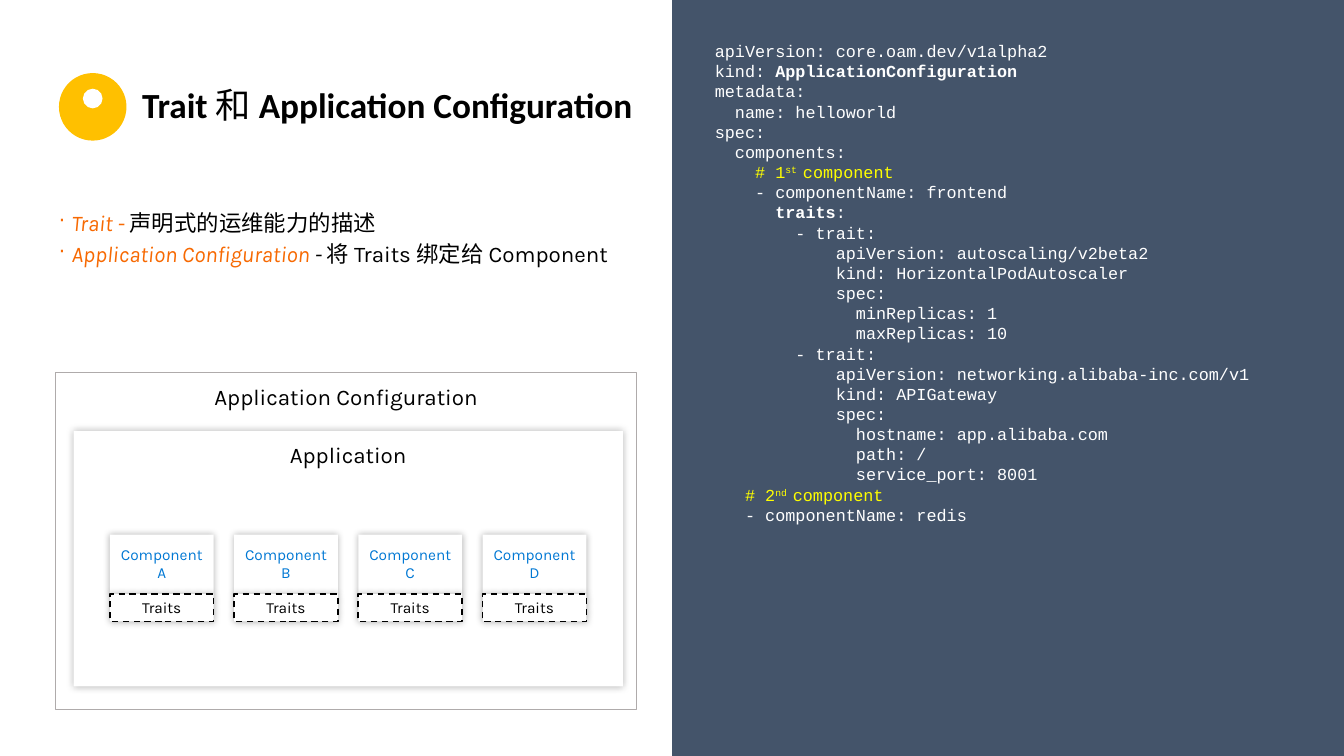
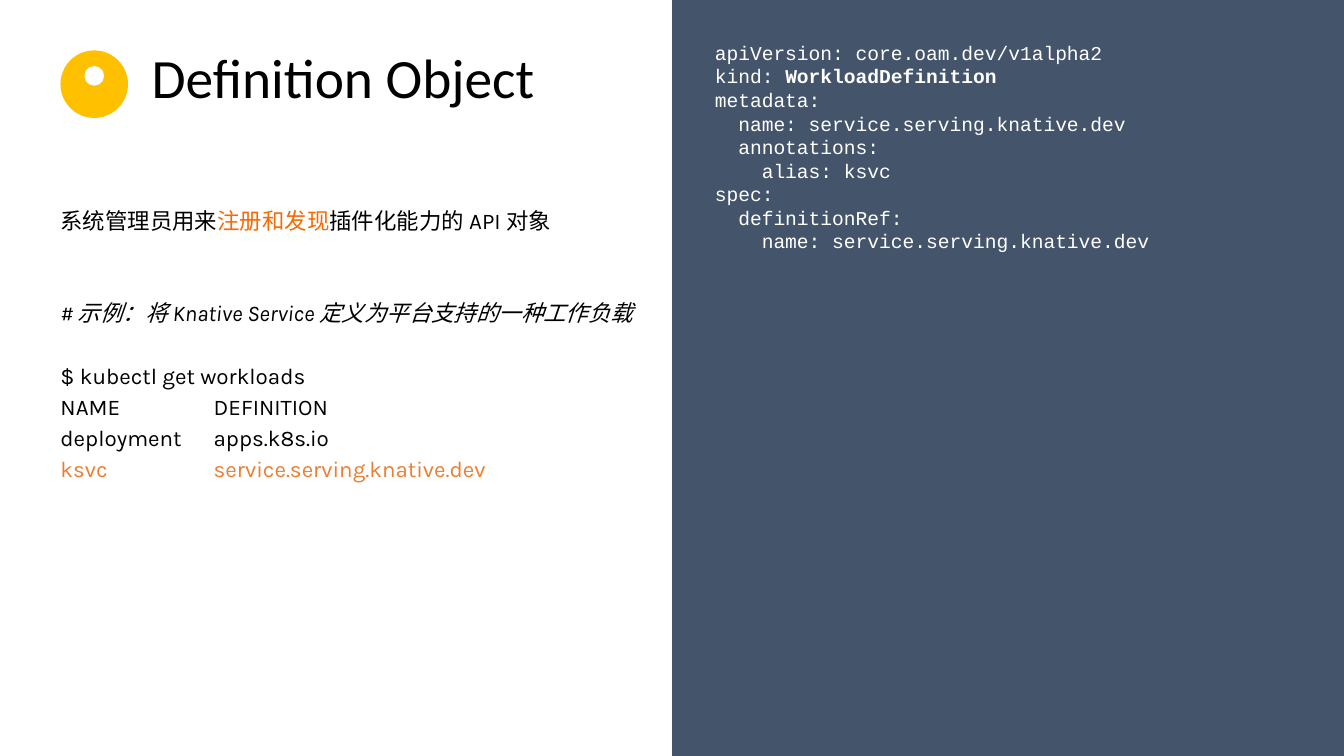
import math

from lxml import etree
from pptx import Presentation, util as u
from pptx.dml.color import RGBColor
from pptx.enum import dml, shapes, text
from pptx.oxml import ns

SLIDE_WIDTH, SLIDE_HEIGHT = 26.67, 15
PANEL_LEFT = SLIDE_WIDTH / 2
WHITE, BLACK, SLATE, GOLD = "FFFFFF", "000000", "44546A", "FFC000"
ORANGE, KSVC_ORANGE, BLUE = "F76902", "ED7D31", "0078D4"
YELLOW, GREY = "FFFF00", "AFABAB"

TITLE_FONT, BODY_FONT, CODE_FONT = "Calibri", "Karla", "Courier New"
BODY = {"name": BODY_FONT, "size": u.Pt(32), "color": BLACK}
SMALL = {**BODY, "size": u.Pt(22)}
BOLD = {"bold": True}
COMMENT = {"color": YELLOW}
SUPERSCRIPT = {**COMMENT, "baseline": 30000}
BODY_GAP = u.Pt(6)
NO_INSET, BOX_INSET, CODE_INSET = (0, 0), (0.2, 0.2), (0.4, 0.32)

TRAIT_CODE = [
    ["apiVersion: core.oam.dev/v1alpha2"],
    ["kind: ", ("ApplicationConfiguration", BOLD)],
    ["metadata:"],
    ["  name: helloworld"],
    ["spec:"],
    ["  components:"],
    [("    # 1", COMMENT), ("st ", SUPERSCRIPT), ("component", COMMENT)],
    ["    - componentName: frontend"],
    ["      ", ("traits", BOLD), ":"],
    ["        - trait:"],
    ["            apiVersion: autoscaling/v2beta2"],
    ["            kind: HorizontalPodAutoscaler"],
    ["            spec:"],
    ["              minReplicas: 1"],
    ["              maxReplicas: 10"],
    ["        - trait:"],
    ["            apiVersion: networking.alibaba-inc.com/v1"],
    ["            kind: APIGateway"],
    ["            spec:"],
    ["              hostname: app.alibaba.com"],
    ["              path: /"],
    ["              service_port: 8001"],
    [("   # 2", COMMENT), ("nd ", SUPERSCRIPT), ("component", COMMENT)],
    ["   - componentName: redis"],
]
WORKLOAD_CODE = [
    ["apiVersion: core.oam.dev/v1alpha2"],
    ["kind: ", ("WorkloadDefinition", BOLD)],
    ["metadata:"],
    ["  name: service.serving.knative.dev"],
    ["  annotations:"],
    ["    alias: ksvc"],
    ["spec:"],
    ["  definitionRef:"],
    ["    name: service.serving.knative.dev"],
]


def rgb(color):
    """Turn a hex string into a colour."""
    return RGBColor.from_string(color)


def inches(*lengths):
    """Turn numbers into lengths."""
    return [u.Inches(length) for length in lengths]


def apply(target, values):
    """Set each attribute of the target from a dict."""
    for name, value in values.items():
        setattr(target, name, value)


def add_run(paragraph, content, style):
    """Add a formatted run to a paragraph."""
    style = dict(style)
    color, baseline = style.pop("color"), style.pop("baseline", None)
    run = paragraph.add_run()
    run.text = content
    apply(run.font, style)
    run.font.color.rgb = rgb(color)
    if baseline:
        run.font._element.set("baseline", str(baseline))


def write(shape, lines, style, inset=(0.1, 0.05), frame=None, **paragraph_values):
    """Write lines of runs into a shape and return its paragraphs."""
    text_frame = shape.text_frame
    margin_x, margin_y = inches(*inset)
    apply(text_frame, {
        "word_wrap": True, "vertical_anchor": text.MSO_ANCHOR.TOP,
        "margin_left": margin_x, "margin_right": margin_x,
        "margin_top": margin_y, "margin_bottom": margin_y, **(frame or {}),
    })
    paragraphs = []
    for runs in lines:
        paragraph = text_frame.add_paragraph() if paragraphs else text_frame.paragraphs[0]
        apply(paragraph, paragraph_values)
        for run in runs:
            content, changes = (run, {}) if isinstance(run, str) else run
            add_run(paragraph, content, {**style, **changes})
        paragraphs.append(paragraph)
    return paragraphs


def add_text(slide, box, lines, style, **options):
    """Add a text box and return its paragraphs."""
    return write(slide.shapes.add_textbox(*inches(*box)), lines, style, **options)


def paint(shape, fill=None, line=None, line_width=1, shadow=False):
    """Give a shape its fill, line and soft shadow."""
    shape.shadow.inherit = False
    if fill:
        shape.fill.solid()
        shape.fill.fore_color.rgb = rgb(fill)
    else:
        shape.fill.background()
    if line:
        shape.line.color.rgb = rgb(line)
        shape.line.width = u.Pt(line_width)
    else:
        shape.line.fill.background()
    if shadow:
        effects = shape._element.spPr.find(ns.qn("a:effectLst"))
        outer = etree.SubElement(effects, ns.qn("a:outerShdw"), blurRad=str(u.Pt(10)), dist="0")
        color = etree.SubElement(outer, ns.qn("a:srgbClr"), val=BLACK)
        etree.SubElement(color, ns.qn("a:alpha"), val="30000")


def add_shape(parent, box, kind=shapes.MSO_SHAPE.RECTANGLE, **look):
    """Add a painted preset shape."""
    shape = parent.shapes.add_shape(kind, *inches(*box))
    paint(shape, **look)
    return shape


def set_bullet(paragraph):
    """Give a paragraph a hanging dot."""
    properties = paragraph._p.get_or_add_pPr()
    indent = u.Inches(0.25)
    properties.set("marL", str(indent))
    properties.set("indent", str(-indent))
    etree.SubElement(properties, ns.qn("a:buSzPct"), val="90000")
    etree.SubElement(properties, ns.qn("a:buChar"), char="·")


def set_tab(paragraph, position):
    """Give a paragraph a left tab stop."""
    tabs = etree.SubElement(paragraph._p.get_or_add_pPr(), ns.qn("a:tabLst"))
    etree.SubElement(tabs, ns.qn("a:tab"), pos=str(u.Inches(position)), algn="l")


def space_out(paragraphs):
    """Put the body gap before every paragraph but the first."""
    for paragraph in paragraphs[1:]:
        paragraph.space_before = BODY_GAP


def add_person_icon(slide, left, top):
    """Draw a person on a gold disc."""
    group = slide.shapes.add_group_shape()
    disc, head, radius = 1.34, 0.39, 0.3
    center = left + disc / 2
    oval = shapes.MSO_SHAPE.OVAL
    add_shape(group, (left, top, disc, disc), oval, fill=GOLD)
    add_shape(group, (center - head / 2, top + 0.31, head, head), oval, fill=WHITE)
    base = top + 1.04
    points = [
        (center - radius * math.cos(math.pi * step / 24),
         base - radius * math.sin(math.pi * step / 24))
        for step in range(25)
    ]
    builder = group.shapes.build_freeform(*points[0], scale=u.Inches(1))
    builder.add_line_segments(points[1:], close=True)
    paint(builder.convert_to_shape(), fill=WHITE)


def add_title(slide, box, runs, size):
    """Add the slide title."""
    style = {"name": TITLE_FONT, "size": u.Pt(size), "color": BLACK}
    add_text(slide, box, [runs], style, line_spacing=0.9,
             frame={"vertical_anchor": text.MSO_ANCHOR.MIDDLE})


def add_code_panel(slide, box, lines, size):
    """Fill the right half with code on slate."""
    left, top, width, height = box
    add_shape(slide, box, fill=SLATE)
    style = {"name": CODE_FONT, "size": u.Pt(size), "color": WHITE}
    add_text(slide, (left + 0.45, top + 0.49, width - 0.45, height - 1.14),
             lines, style, inset=CODE_INSET)


def add_component(slide, left, top, letter):
    """Draw a component card with its traits strip."""
    group = slide.shapes.add_group_shape()
    width, card_height, strip_height = 2.06, 1.18, 0.54
    centered = {"alignment": text.PP_ALIGN.CENTER}
    card = add_shape(group, (left, top, width, card_height), fill=WHITE, shadow=True)
    label = {**SMALL, "color": BLUE}
    paragraph = write(card, [["Component"]], label, inset=BOX_INSET, **centered)[0]
    paragraph.add_line_break()
    add_run(paragraph, letter, label)
    strip = add_shape(group, (left, top + card_height, width, strip_height),
                      fill=WHITE, line=BLACK, line_width=2.25, shadow=True)
    strip.line.dash_style = dml.MSO_LINE.DASH
    write(strip, [["Traits"]], SMALL,
          frame={"vertical_anchor": text.MSO_ANCHOR.MIDDLE}, **centered)


def add_application_diagram(slide, box):
    """Nest the components in an application and its configuration."""
    left, top, width, height = box
    centered = {"inset": BOX_INSET, "alignment": text.PP_ALIGN.CENTER}
    application = add_shape(slide, (left + 0.36, top + 1.15, width - 0.64, height - 1.61),
                            fill=WHITE, shadow=True)
    write(application, [["Application"]], BODY, **centered)
    configuration = add_shape(slide, box, line=GREY, line_width=1.5)
    write(configuration, [["Application Configuration"]], BODY, **centered)
    for index, letter in enumerate("ABCD"):
        add_component(slide, left + 1.08 + index * 2.465, top + 3.21, letter)


def add_command_example(slide, box):
    """Show the workload listing under its caption."""
    orange = {"color": KSVC_ORANGE}
    paragraphs = add_text(slide, box, [
        [("# 示例：将 Knative Service 定义为平台支持的一种工作负载", {"italic": True})],
        ["$ kubectl get workloads"],
        ["NAME\tDEFINITION"],
        ["deployment\tapps.k8s.io"],
        [("ksvc\tservice.serving.knative.dev", orange)],
    ], BODY, inset=NO_INSET)
    for paragraph in paragraphs[2:]:
        set_tab(paragraph, 3.04)
    space_out(paragraphs)
    paragraphs[1].space_before = u.Pt(51)


def add_split_slide(presentation, code, code_size):
    """Start a slide with a white half and a code half."""
    slide = presentation.slides.add_slide(presentation.slide_layouts[6])
    add_code_panel(slide, (PANEL_LEFT, 0, PANEL_LEFT, SLIDE_HEIGHT), code, code_size)
    return slide


def build_trait_slide(presentation):
    """Build the trait and application configuration slide."""
    slide = add_split_slide(presentation, TRAIT_CODE, 24)
    add_title(slide, (2.72, 1.66, 10.24, 0.94),
              [("Trait ", BOLD), "和 ", ("Application Configuration", BOLD)], 50.4)
    term = {"color": ORANGE, "italic": True}
    paragraphs = add_text(slide, (1.17, 4.15, 11.17, 1.18), [
        [("Trait - ", term), "声明式的运维能力的描述"],
        [("Application Configuration ", term), ("- ", {"italic": True}),
         "将 Traits 绑定给 Component"],
    ], BODY, inset=NO_INSET)
    for paragraph in paragraphs:
        set_bullet(paragraph)
    space_out(paragraphs)
    add_application_diagram(slide, (1.1, 7.4, 11.54, 6.68))
    add_person_icon(slide, 1.17, 1.45)


def build_definition_slide(presentation):
    """Build the definition object slide."""
    slide = add_split_slide(presentation, WORKLOAD_CODE, 28)
    add_title(slide, (2.91, 1, 10.24, 1.21), ["Definition Object"], 79.2)
    add_text(slide, (1.2, 4.11, 10.39, 0.54), [
        ["系统管理员用来", ("注册和发现", {"color": ORANGE}), "插件化能力的 API 对象"],
    ], BODY, inset=NO_INSET)
    add_person_icon(slide, 1.2, 1)
    add_command_example(slide, (1.2, 5.94, 11.61, 3.77))


def main():
    """Build and save the presentation."""
    presentation = Presentation()
    apply(presentation, {"slide_width": u.Inches(SLIDE_WIDTH),
                         "slide_height": u.Inches(SLIDE_HEIGHT)})
    build_trait_slide(presentation)
    build_definition_slide(presentation)
    presentation.save("out.pptx")


if __name__ == "__main__":
    main()
